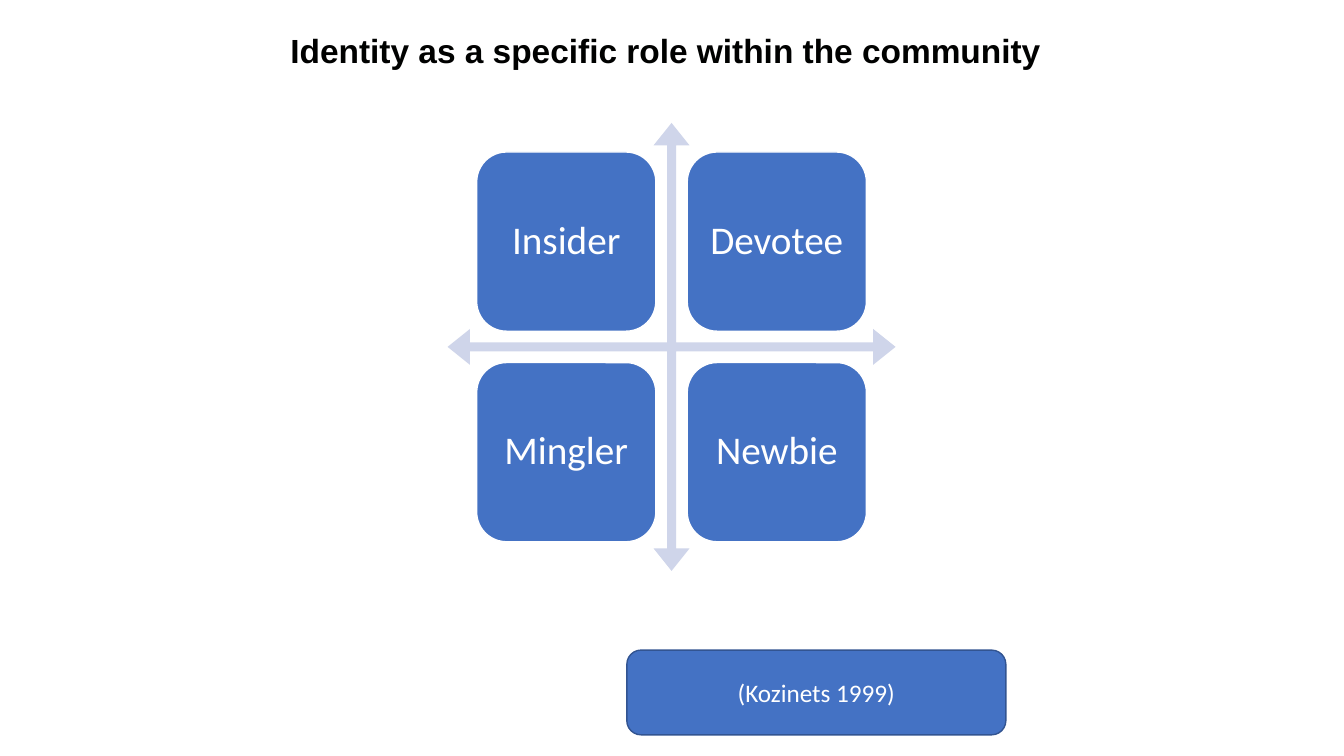
"""Build a slide with the four community roles around a cross of arrows."""
from pptx import Presentation
from pptx.dml.color import RGBColor
from pptx.enum import shapes, text
from pptx.util import Pt

TITLE = "Identity as a specific role within the community"
ROLES = [["Insider", "Devotee"], ["Mingler", "Newbie"]]
CITATION = "(Kozinets 1999)"

BLACK = RGBColor(0x00, 0x01, 0x00)
WHITE = RGBColor(0xFF, 0xFF, 0xFF)
BLUE = RGBColor(0x44, 0x72, 0xC4)
DARK_BLUE = RGBColor(0x32, 0x54, 0x91)
PALE_BLUE = RGBColor(0xCF, 0xD5, 0xEA)

CENTER_X, CENTER_Y = 479.7, 247.8
CROSS = 320
TILE = 128
PITCH = 150.4


def add_box(page, words, place, size, outline):
    box = page.shapes.add_shape(shapes.MSO_SHAPE.ROUNDED_RECTANGLE, *map(Pt, place))
    box.shadow.inherit = False
    box.fill.solid()
    box.fill.fore_color.rgb = BLUE
    box.line.color.rgb = outline
    box.line.width = Pt(1)
    frame = box.text_frame
    frame.word_wrap = True
    frame.vertical_anchor = text.MSO_ANCHOR.MIDDLE
    para = frame.paragraphs[0]
    para.text = words
    para.alignment = text.PP_ALIGN.CENTER
    para.font.name = "Calibri"
    para.font.size = Pt(size)
    para.font.color.rgb = WHITE
    return box


def add_title(page):
    title = page.shapes.title
    title.left, title.top, title.width, title.height = map(Pt, (207.4, 21.6, 548, 28.8))
    frame = title.text_frame
    frame.margin_left = frame.margin_right = frame.margin_top = frame.margin_bottom = 0
    frame.word_wrap = False
    frame.vertical_anchor = text.MSO_ANCHOR.MIDDLE
    para = frame.paragraphs[0]
    para.text = TITLE
    para.alignment = text.PP_ALIGN.LEFT
    para.font.name = "Arial"
    para.font.size = Pt(23.9)
    para.font.bold = True
    para.font.color.rgb = BLACK


def add_cross(page):
    left, top = CENTER_X - CROSS / 2, CENTER_Y - CROSS / 2
    cross = page.shapes.add_shape(
        shapes.MSO_SHAPE.QUAD_ARROW, Pt(left), Pt(top), Pt(CROSS), Pt(CROSS))
    cross.shadow.inherit = False
    cross.fill.solid()
    cross.fill.fore_color.rgb = PALE_BLUE
    cross.line.fill.background()
    for index, share in enumerate((0.02, 0.04, 0.05)):
        cross.adjustments[index] = share


def add_roles(page):
    for row, names in enumerate(ROLES):
        for column, name in enumerate(names):
            left = CENTER_X + (column - 0.5) * PITCH - TILE / 2
            top = CENTER_Y + (row - 0.5) * PITCH - TILE / 2
            tile = add_box(page, name, (left, top, TILE, TILE), 28, WHITE)
            frame = tile.text_frame
            frame.margin_left = frame.margin_right = Pt(8.4)
            frame.margin_top = frame.margin_bottom = Pt(8.4)
            frame.paragraphs[0].line_spacing = 0.9


def main():
    deck = Presentation()
    deck.slide_width, deck.slide_height = Pt(960), Pt(540)
    page = deck.slides.add_slide(deck.slide_layouts.get_by_name("Title Only"))
    add_title(page)
    add_cross(page)
    add_roles(page)
    add_box(page, CITATION, (447.8, 464.4, 270.7, 60.5), 18, DARK_BLUE)
    deck.save("out.pptx")


if __name__ == "__main__":
    main()
